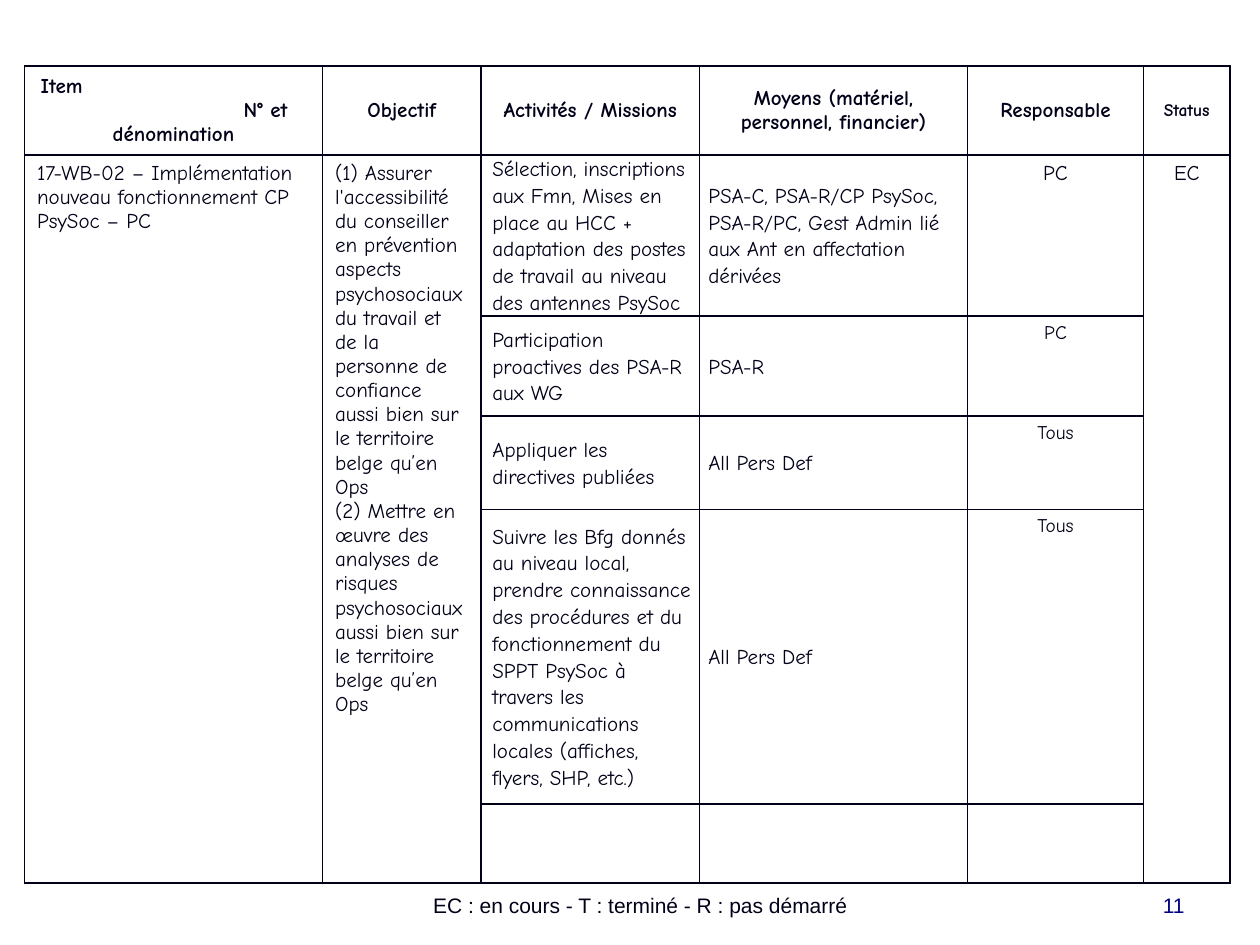
from lxml.etree import SubElement
from pptx import Presentation
from pptx.dml.color import RGBColor
from pptx.enum.text import MSO_ANCHOR, PP_ALIGN
from pptx.oxml.ns import qn
from pptx.util import Pt

COLOURS = {"ink": "000018", "number": "000080"}
COLUMN_WIDTHS = [170.3, 90.6, 124.9, 153.1, 100.6, 49.4]
ROW_HEIGHTS = [51, 91.8, 57.4, 53.2, 168.3, 45.4]
HEADINGS = ["Objectif", "Activités / Missions", "Moyens (matériel, personnel, financier)", "Responsable"]
PROJECT = "17-WB-02 – Implémentation nouveau fonctionnement CP PsySoc – PC"
OBJECTIVES = [
    "(1) Assurer l'accessibilité du conseiller en prévention aspects psychosociaux du travail et",
    "de la personne de confiance aussi bien sur le territoire belge qu’en Ops",
    "(2) Mettre en œuvre des analyses de risques psychosociaux aussi bien sur le territoire",
    "belge qu’en Ops",
]
ACTIVITIES = [
    ("Sélection, inscriptions aux Fmn, Mises en place au HCC + adaptation des postes de travail "
     "au niveau des antennes PsySoc",
     "PSA-C, PSA-R/CP PsySoc, PSA-R/PC, Gest Admin lié aux Ant en affectation dérivées", "PC", 12),
    ("Participation proactives des PSA-R aux WG", "PSA-R", "PC", 11),
    ("Appliquer les directives publiées", "All Pers Def", "Tous", 11),
    ("Suivre les Bfg donnés au niveau local, prendre connaissance des procédures et du fonctionnement "
     "du SPPT PsySoc à travers les communications locales (affiches, flyers, SHP, etc.)",
     "All Pers Def", "Tous", 11),
]


def set_all(target, values):
    """Set each named attribute of the target."""
    for name, value in values.items():
        setattr(target, name, value)


def write_para(para, text, size=12, font="Comic Neue", colour="ink", bold=False, indent=0, **layout):
    """Write one formatted run into a paragraph."""
    if indent:
        para._p.get_or_add_pPr().set("marL", str(Pt(indent)))
    set_all(para, layout)
    span = para.add_run()
    span.text = text
    set_all(span.font, {"name": font, "size": Pt(size), "bold": bold})
    span.font.color.rgb = RGBColor.from_string(COLOURS[colour])


def write_cell(cell, texts, anchor=MSO_ANCHOR.TOP, margins=(7.2, 3.6), **layout):
    """Fill a cell with one paragraph for each text."""
    side, edge = (Pt(margin) for margin in margins)
    set_all(cell, {"vertical_anchor": anchor, "margin_left": side, "margin_right": side,
                   "margin_top": edge, "margin_bottom": edge})
    frame = cell.text_frame
    for index, text in enumerate(texts):
        para = frame.add_paragraph() if index else frame.paragraphs[0]
        write_para(para, text, **layout)


def outline_cell(cell):
    """Give a cell thin dark borders and no fill."""
    properties = cell._tc.get_or_add_tcPr()
    for side in ("a:lnL", "a:lnR", "a:lnT", "a:lnB"):
        line = SubElement(properties, qn(side), w=str(Pt(1)))
        SubElement(SubElement(line, qn("a:solidFill")), qn("a:srgbClr"), val=COLOURS["ink"])
    cell.fill.background()


def write_header(table):
    """Write the heading row."""
    heading = {"anchor": MSO_ANCHOR.MIDDLE, "bold": True, "alignment": PP_ALIGN.CENTER}
    first = table.cell(0, 0)
    write_cell(first, ["Item"], MSO_ANCHOR.MIDDLE, bold=True, indent=2)
    write_para(first.text_frame.add_paragraph(), "N° et", bold=True, indent=118)
    write_para(first.text_frame.add_paragraph(), "dénomination", bold=True, alignment=PP_ALIGN.CENTER)
    for column, text in enumerate(HEADINGS, 1):
        write_cell(table.cell(0, column), [text], **heading)
    write_cell(table.cell(0, 5), ["Status"], size=10, **heading)


def write_body(table):
    """Write the project, its objectives and its activities."""
    last = len(ROW_HEIGHTS) - 1
    for column in (0, 1, 5):
        table.cell(1, column).merge(table.cell(last, column))
    write_cell(table.cell(1, 0), [PROJECT])
    write_cell(table.cell(1, 1), OBJECTIVES)
    write_cell(table.cell(1, 5), ["EC"], alignment=PP_ALIGN.CENTER)
    detail = {"anchor": MSO_ANCHOR.MIDDLE, "margins": (5, 0), "line_spacing": Pt(15.3)}
    for row, (activity, means, owner, size) in enumerate(ACTIVITIES, 1):
        write_cell(table.cell(row, 2), [activity], indent=1.5, **detail)
        write_cell(table.cell(row, 3), [means], **detail)
        write_cell(table.cell(row, 4), [owner], size=size, alignment=PP_ALIGN.CENTER)


def add_action_table(page, left, top):
    """Place the action plan table with its corner at the given point."""
    box = page.shapes.add_table(len(ROW_HEIGHTS), len(COLUMN_WIDTHS), Pt(left), Pt(top),
                                Pt(sum(COLUMN_WIDTHS)), Pt(sum(ROW_HEIGHTS)))
    table = box.table
    set_all(table, {"first_row": False, "horz_banding": False})
    for column, width in zip(table.columns, COLUMN_WIDTHS):
        column.width = Pt(width)
    for row, height in zip(table.rows, ROW_HEIGHTS):
        row.height = Pt(height)
    for cell in table.iter_cells():
        outline_cell(cell)
    write_header(table)
    write_body(table)


def add_footer_text(page, left, top, width, height, text, colour, alignment):
    """Place a line of footer text at the bottom of a box."""
    box = page.shapes.add_textbox(Pt(left), Pt(top), Pt(width), Pt(height))
    set_all(box.text_frame, {"word_wrap": True, "vertical_anchor": MSO_ANCHOR.BOTTOM})
    write_para(box.text_frame.paragraphs[0], text, font="Arial", colour=colour, alignment=alignment)


def main():
    """Build the action plan slide."""
    deck = Presentation()
    set_all(deck, {"slide_width": Pt(720), "slide_height": Pt(540)})
    page = deck.slides.add_slide(deck.slide_layouts[6])
    add_footer_text(page, 168, 492, 396, 36, "EC : en cours - T : terminé - R : pas démarré",
                    "ink", PP_ALIGN.CENTER)
    add_action_table(page, 14, 37.6)
    add_footer_text(page, 516, 492, 168, 36, "11", "number", PP_ALIGN.RIGHT)
    deck.save("out.pptx")


if __name__ == "__main__":
    main()
